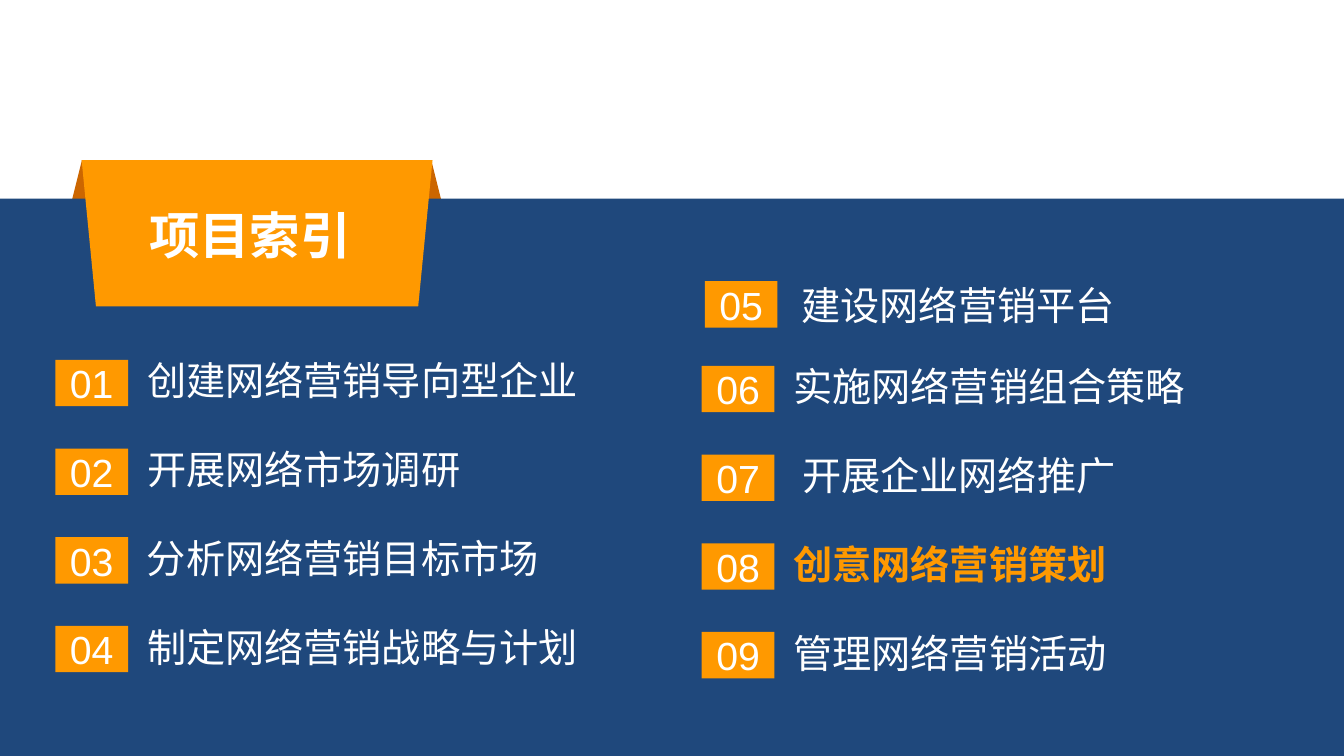
from pptx import Presentation
from pptx.dml.color import RGBColor
from pptx.enum.shapes import MSO_SHAPE
from pptx.enum.text import MSO_ANCHOR, MSO_AUTO_SIZE, PP_ALIGN
from pptx.oxml.ns import qn
from pptx.util import Inches, Pt

# Content
TITLE = "项目索引"
LEFT = ["创建网络营销导向型企业", "开展网络市场调研",
        "分析网络营销目标市场", "制定网络营销战略与计划"]
LEAD = "建设网络营销平台"
RIGHT = ["实施网络营销组合策略", " 开展企业网络推广",
         "创意网络营销策划", "管理网络营销活动"]
ACTIVE = 8

WHITE = RGBColor(0xFF, 0xFF, 0xFF)
NAVY = RGBColor(0x1F, 0x48, 0x7C)
ORANGE = RGBColor(0xFF, 0x99, 0x00)
BROWN = RGBColor(0xCC, 0x66, 0x00)

# Grid, in inches
WIDE, HIGH = 13.33, 7.5
HORIZON = 1.97
BADGE_W, BADGE_H = 0.72, 0.46
PITCH = 0.88
CHAR, SPACE, PAD = 0.394, 0.11, 0.19

# Each group: first number, badge left, badge top, label shift, labels
GROUPS = [
    (1, 0.55, 3.57, (0.81, -0.08), LEFT),
    (5, 6.99, 2.79, (0.86, -0.05), [LEAD]),
    (6, 6.96, 3.63, (0.81, -0.08), RIGHT),
]

prs = Presentation()
prs.slide_width, prs.slide_height = Inches(WIDE), Inches(HIGH)
slide = prs.slides.add_slide(prs.slide_layouts[6])


def block(kind, fill, *box):
    shape = slide.shapes.add_shape(kind, *map(Inches, box))
    shape.shadow.inherit = False
    shape.fill.solid()
    shape.fill.fore_color.rgb = fill
    shape.line.fill.background()
    return shape


def write(shape, text, size=28, color=WHITE, bold=False):
    para = shape.text_frame.paragraphs[0]
    para.text = text
    font = para.font
    font.name, font.size, font.bold = "Arial", Pt(size), bold
    font.color.rgb = color
    return para


def label(text, *box, wrap=False, **style):
    shape = slide.shapes.add_textbox(*map(Inches, box))
    shape.text_frame.word_wrap = wrap
    shape.text_frame.auto_size = MSO_AUTO_SIZE.SHAPE_TO_FIT_TEXT
    write(shape, text, **style)


def badge(num, left, top):
    shape = block(MSO_SHAPE.RECTANGLE, ORANGE, left, top, BADGE_W, BADGE_H)
    shape.text_frame.vertical_anchor = MSO_ANCHOR.MIDDLE
    write(shape, f"{num:02}").alignment = PP_ALIGN.CENTER


# Ribbon folded over the blue panel
block(MSO_SHAPE.TRAPEZOID, BROWN, 0.62, 1.59, 3.85, 0.77)
block(MSO_SHAPE.RECTANGLE, NAVY, 0, HORIZON, WIDE, HIGH - HORIZON)
ribbon = block(MSO_SHAPE.TRAPEZOID, ORANGE, 0.81, 1.59, 3.48, 1.45)
ribbon.adjustments[0] = 0.098
ribbon._element.spPr.find(qn("a:xfrm")).set("flipV", "1")
label(TITLE, 1.38, 1.98, 2.42, 0.71, wrap=True, size=36, bold=True)

# Numbered index
for first, left, top, (dx, dy), names in GROUPS:
    for row, name in enumerate(names):
        num, y = first + row, top + row * PITCH
        gaps = name.count(" ")
        width = (len(name) - gaps) * CHAR + gaps * SPACE + PAD
        hot = num == ACTIVE
        label(name, left + dx, y + dy, width, 0.57,
              color=ORANGE if hot else WHITE, bold=hot)
        badge(num, left, y)

prs.save("out.pptx")
